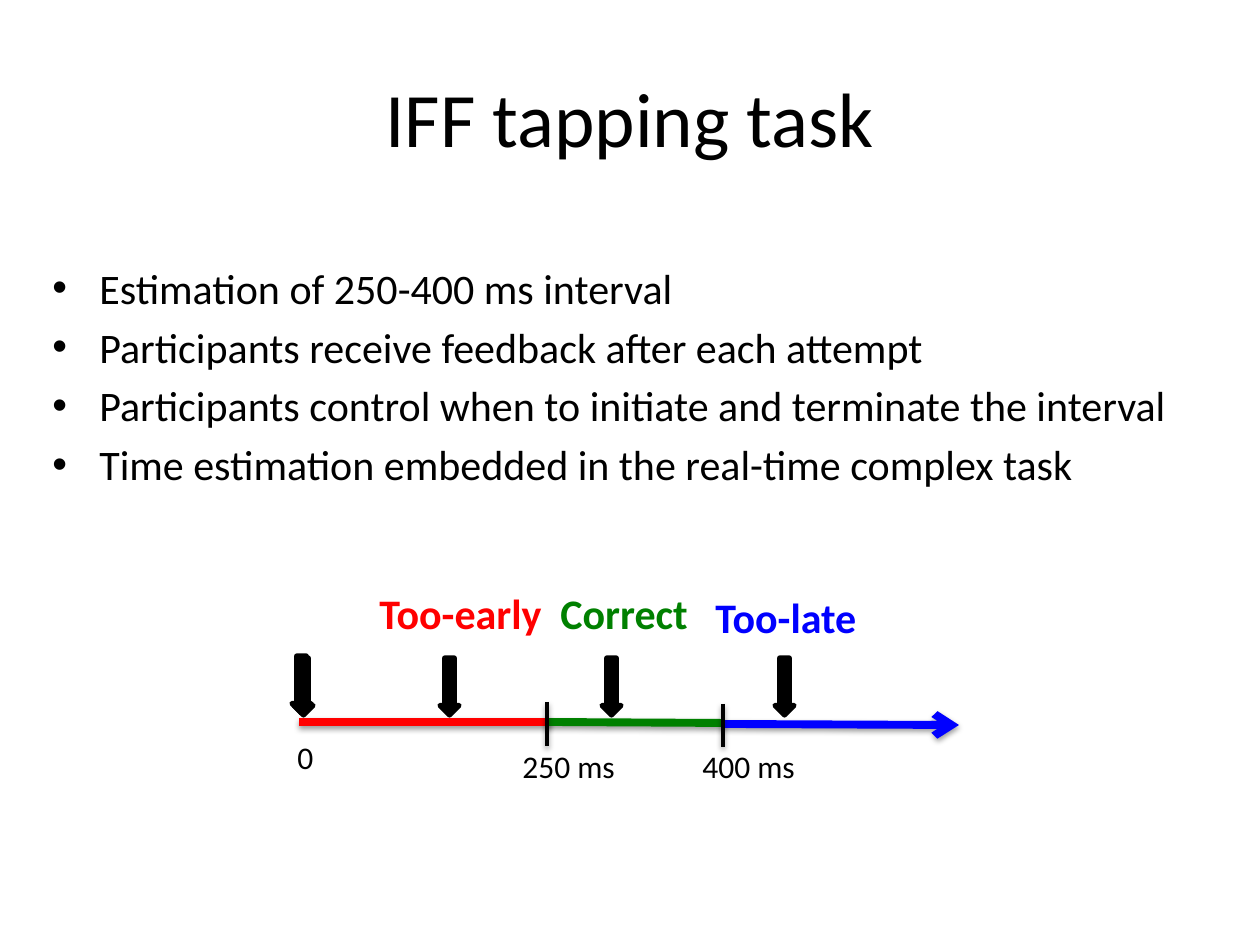
from lxml.etree import SubElement
from pptx import Presentation
from pptx.dml.color import RGBColor
from pptx.enum.shapes import MSO_CONNECTOR, MSO_SHAPE
from pptx.enum.text import MSO_ANCHOR, PP_ALIGN
from pptx.oxml import parse_xml
from pptx.oxml.ns import nsdecls, qn
from pptx.util import Pt

EMU_PER_PX = 914400 / 126
BLACK = RGBColor(0, 0, 0)
RED = RGBColor(255, 0, 0)
GREEN = RGBColor(0, 128, 0)
BLUE = RGBColor(0, 0, 255)
FONT = "Calibri"

# Content; lengths in px
TITLE = "IFF tapping task"
BULLETS = [
    "Estimation of 250-400 ms interval",
    "Participants receive feedback after each attempt",
    "Participants control when to initiate and terminate the interval",
    "Time estimation embedded in the real-time complex task",
]
BULLET_INDENT = 47
# x1, y1, x2, y2, colour, width in pt, arrowhead
TIMELINE = [
    (299, 722, 550, 722, RED, 4.5, False),
    (547, 722, 723, 723, GREEN, 4.5, False),
    (723, 724, 959, 725, BLUE, 4.5, True),
    (547, 702, 547, 746, BLACK, 2, False),
    (723, 704, 723, 747, BLACK, 2, False),
]
# text, left, top, width
TIMES = [("0", 285, 732, 75), ("250 ms", 510, 741, 122), ("400 ms", 690, 741, 139)]
# text, left, top, colour
OUTCOMES = [
    ("Too-early", 367, 581, RED),
    ("Correct", 548, 581, GREEN),
    ("Too-late", 703, 585, BLUE),
]
TAPS = [(440, 658), (602, 658), (294, 658), (775, 658), (292, 656)]
TAP_SIZE = (19, 57)

SHADOW = (
    f'<a:effectLst {nsdecls("a")}>'
    '<a:outerShdw blurRad="40000" dist="20000" dir="5400000" rotWithShape="0">'
    '<a:srgbClr val="000000"><a:alpha val="38000"/></a:srgbClr>'
    "</a:outerShdw></a:effectLst>"
)


def px(*values):
    return [round(v * EMU_PER_PX) for v in values]


def add_text(box, lines, size, color=BLACK, bold=False, anchor=MSO_ANCHOR.TOP):
    tf = slide.shapes.add_textbox(*px(*box)).text_frame
    tf.word_wrap = True
    tf.vertical_anchor = anchor
    for i, line in enumerate(lines):
        p = tf.paragraphs[0] if i == 0 else tf.add_paragraph()
        r = p.add_run()
        r.text = line
        r.font.name, r.font.size, r.font.bold = FONT, Pt(size), bold
        r.font.color.rgb = color
    return tf


def add_bullet(p):
    p.space_before = Pt(4.8)
    pPr = p._p.get_or_add_pPr()
    indent = px(BULLET_INDENT)[0]
    pPr.set("marL", str(indent))
    pPr.set("indent", str(-indent))
    SubElement(pPr, qn("a:buFont")).set("typeface", "Arial")
    SubElement(pPr, qn("a:buChar")).set("char", "•")


prs = Presentation()
prs.slide_width, prs.slide_height = px(1260, 945)
slide = prs.slides.add_slide(prs.slide_layouts[6])

# Timeline and its tick marks
for x1, y1, x2, y2, color, width, arrow in TIMELINE:
    line = slide.shapes.add_connector(MSO_CONNECTOR.STRAIGHT, *px(x1, y1, x2, y2))
    line.line.color.rgb = color
    line.line.width = Pt(width)
    if arrow:
        SubElement(line.line._get_or_add_ln(), qn("a:tailEnd")).set("type", "arrow")
    line._element.spPr.append(parse_xml(SHADOW))

# Time and outcome labels
for text, left, top, width in TIMES:
    add_text((left, top, width, 50), [text], 18)
for text, left, top, color in OUTCOMES:
    add_text((left, top, 278, 63), [text], 24, color, bold=True)

# Title and bullets
tf = add_text((63, 38, 1134, 158), [TITLE], 44, anchor=MSO_ANCHOR.MIDDLE)
tf.paragraphs[0].alignment = PP_ALIGN.CENTER
tf = add_text((40, 256, 1197, 324), BULLETS, 24)
for p in tf.paragraphs:
    add_bullet(p)

# Tap arrows
for left, top in TAPS:
    sp = slide.shapes.add_shape(MSO_SHAPE.DOWN_ARROW, *px(left, top, *TAP_SIZE))
    sp.shadow.inherit = False
    sp.fill.solid()
    sp.fill.fore_color.rgb = BLACK
    sp.line.color.rgb = BLACK
    sp.line.width = Pt(3)

prs.save("out.pptx")
